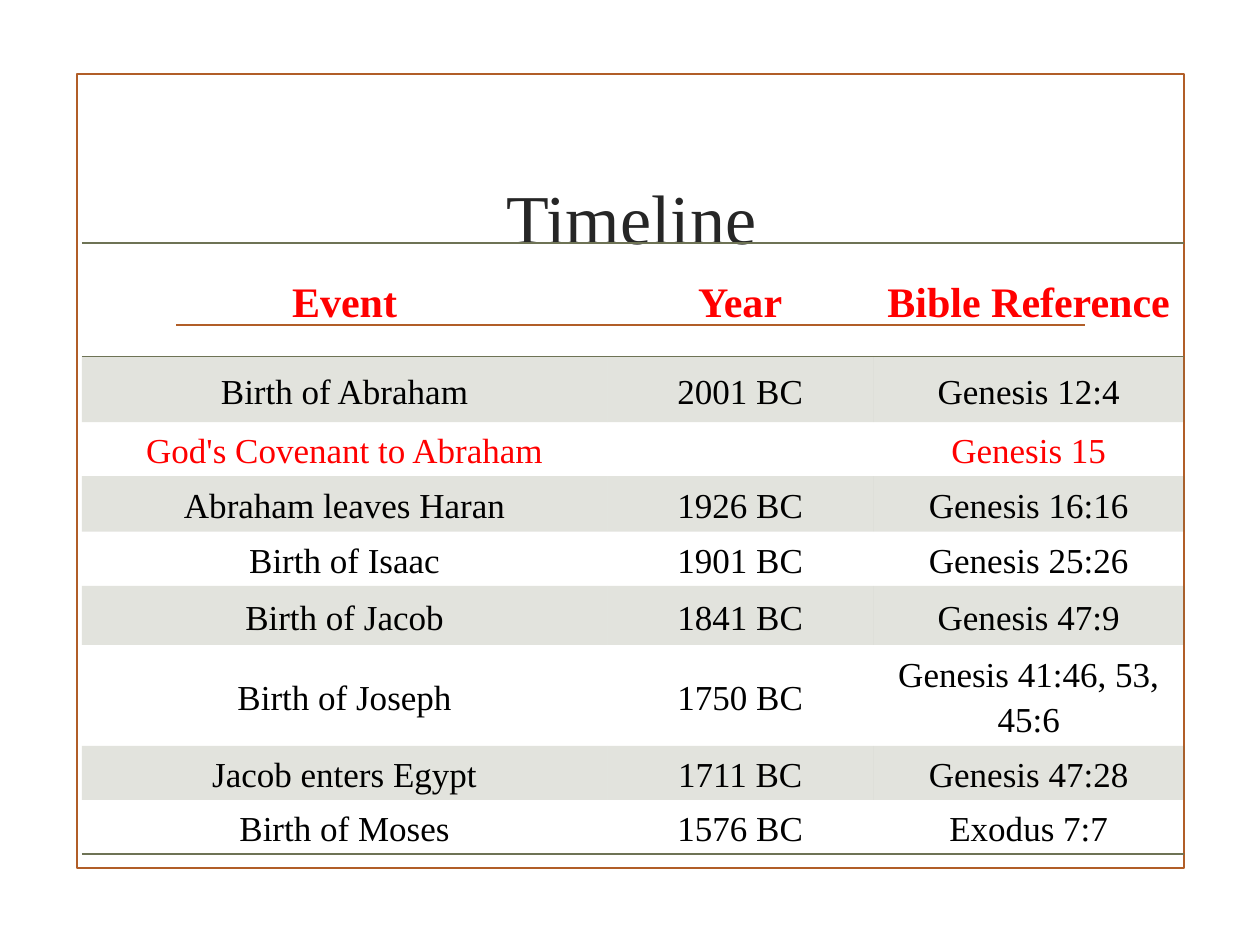
from lxml import etree
from pptx import Presentation
from pptx.dml.color import RGBColor
from pptx.enum.shapes import MSO_CONNECTOR, MSO_SHAPE
from pptx.enum.text import MSO_ANCHOR, PP_ALIGN
from pptx.oxml.ns import qn
from pptx.util import Inches, Pt

MIDDLE = MSO_ANCHOR.MIDDLE
CENTER = PP_ALIGN.CENTER
FONT = "Times New Roman"
PLAIN = "{2D5ABB26-0587-4C30-8999-92F81FD0307C}"  # no style, no grid
COLORS = {"frame": "B15E28", "title": "262626", "olive": "6E7355",
          "red": "FF0000", "black": "000000"}

ROWS = [
    ("Event", "Year", "Bible Reference"),
    ("Birth of Abraham", "2001 BC", "Genesis 12:4"),
    ("God's Covenant to Abraham", "", "Genesis 15"),
    ("Abraham leaves Haran", "1926 BC", "Genesis 16:16"),
    ("Birth of Isaac", "1901 BC", "Genesis 25:26"),
    ("Birth of Jacob", "1841 BC", "Genesis 47:9"),
    ("Birth of Joseph", "1750 BC", "Genesis 41:46, 53, 45:6"),
    ("Jacob enters Egypt", "1711 BC", "Genesis 47:28"),
    ("Birth of Moses", "1576 BC", "Exodus 7:7"),
]
WIDTHS = [4.17, 2.11, 2.47]
HEIGHTS = [0.9, 0.52, 0.43, 0.44, 0.43, 0.47, 0.8, 0.43, 0.43]
RED_ROWS = (0, 2)


def style(para, size, color, bold=False):
    para.alignment = CENTER
    para.font.name = FONT
    para.font.size = Pt(size)
    para.font.bold = bold
    para.font.color.rgb = RGBColor.from_string(COLORS[color])


def border(cell, tag):
    """Draw one olive edge; call before the cell is filled."""
    line = etree.SubElement(cell._tc.get_or_add_tcPr(), qn(tag), w=str(Pt(1)))
    fill = etree.SubElement(line, qn("a:solidFill"))
    etree.SubElement(fill, qn("a:srgbClr"), val=COLORS["olive"])


prs = Presentation()
prs.slide_width, prs.slide_height = Inches(10), Inches(7.5)
slide = prs.slides.add_slide(prs.slide_layouts[5])
shapes = slide.shapes

# Title
title = shapes.title
title.left, title.top = Inches(1.29), Inches(1)
title.width, title.height = Inches(7.44), Inches(1.43)
title.text_frame.text = "Timeline"
title.text_frame.vertical_anchor = MIDDLE
style(title.text_frame.paragraphs[0], 40, "title")

# Frame and rule, behind the title
frame = shapes.add_shape(MSO_SHAPE.RECTANGLE, Inches(0.61), Inches(0.59),
                         Inches(8.79), Inches(6.3))
frame.shadow.inherit = False
frame.fill.background()
rule = shapes.add_connector(MSO_CONNECTOR.STRAIGHT, Inches(1.4), Inches(2.58),
                            Inches(8.61), Inches(2.58))
etree.SubElement(rule._element.spPr, qn("a:effectLst"))
for item in (frame, rule):
    item.line.color.rgb = RGBColor.from_string(COLORS["frame"])
    item.line.width = Pt(1.25)
    title._element.addprevious(item._element)

# Timeline table
table = shapes.add_table(len(ROWS), len(WIDTHS), Inches(0.65), Inches(1.93),
                         Inches(sum(WIDTHS)), Inches(sum(HEIGHTS))).table
table._tbl.tblPr.find(qn("a:tableStyleId")).text = PLAIN
for col, width in zip(table.columns, WIDTHS):
    col.width = Inches(width)

for r, (texts, height) in enumerate(zip(ROWS, HEIGHTS)):
    table.rows[r].height = Inches(height)
    for c, text in enumerate(texts):
        cell = table.cell(r, c)
        cell.text = text
        cell.vertical_anchor = MIDDLE
        cell.margin_left = cell.margin_right = Inches(0.03)
        cell.margin_top = cell.margin_bottom = Inches(0.03)
        para = cell.text_frame.paragraphs[0]
        para.line_spacing = 1.15
        style(para, 20 if r else 24, "red" if r in RED_ROWS else "black", r == 0)
        if r == 0:
            border(cell, "a:lnT")
        if r in (0, len(ROWS) - 1):
            border(cell, "a:lnB")
        if r % 2:
            cell.fill.solid()
            cell.fill.fore_color.rgb = RGBColor.from_string(COLORS["olive"])
            tint = cell._tc.tcPr.find(qn("a:solidFill")).find(qn("a:srgbClr"))
            etree.SubElement(tint, qn("a:alpha"), val="20000")
        else:
            cell.fill.background()

prs.save("out.pptx")
